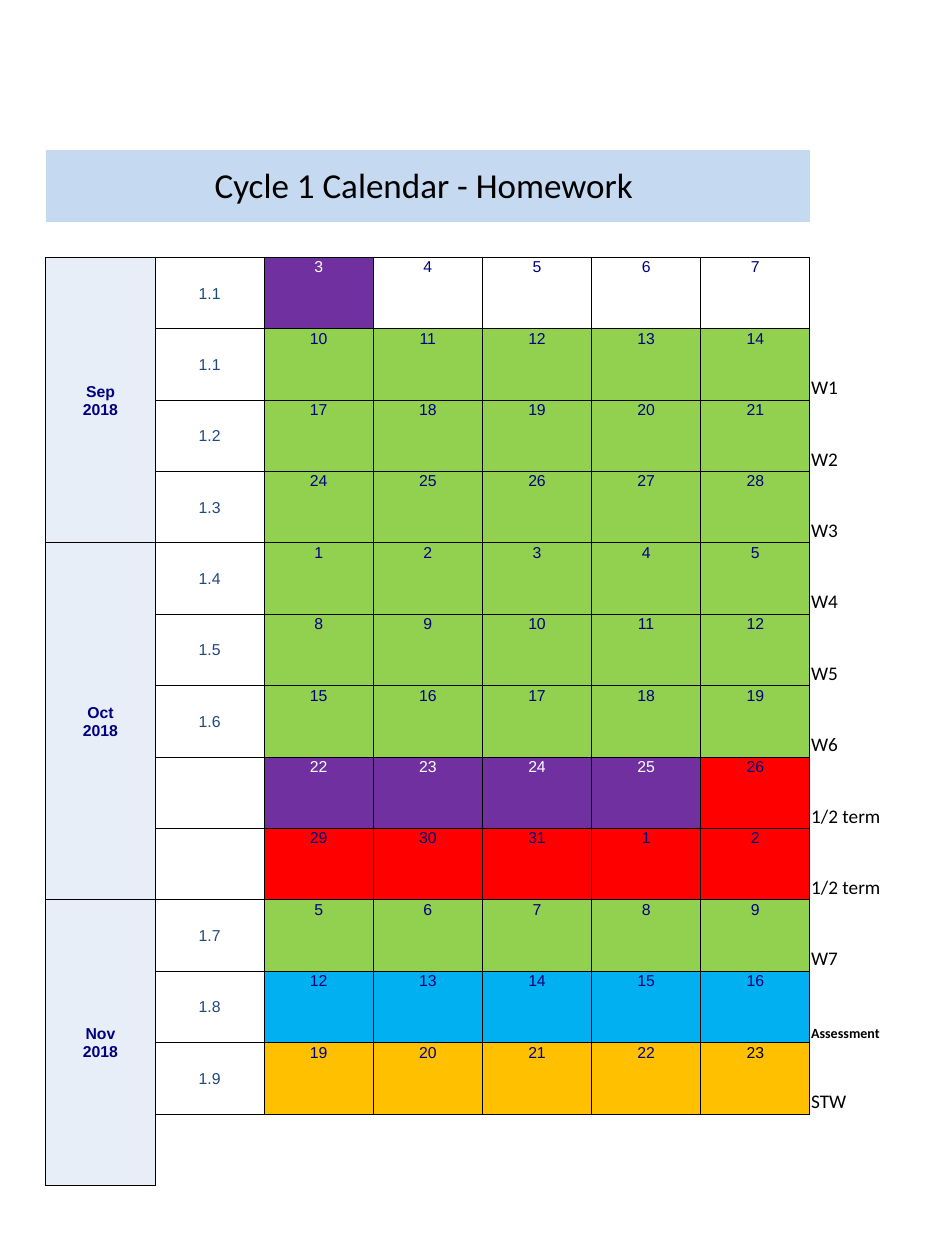
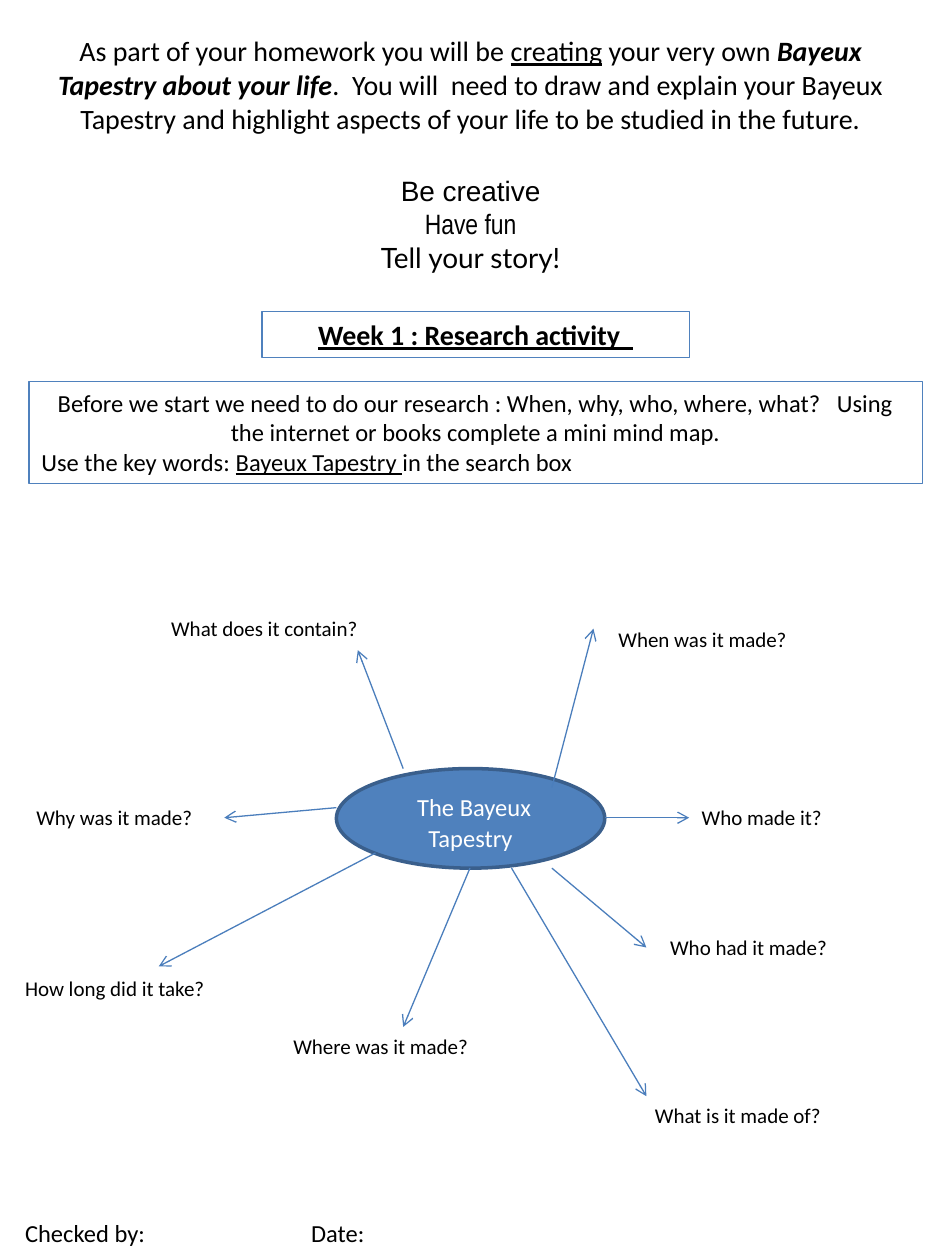
"""Build a two-page homework booklet: a term calendar and a research mind map."""
import dataclasses

import lxml.etree
import pptx
import pptx.dml.color
import pptx.enum.shapes
import pptx.enum.text
import pptx.oxml
import pptx.oxml.ns
import pptx.util

ALIGN = pptx.enum.text.PP_ALIGN
ANCHOR = pptx.enum.text.MSO_ANCHOR
FIT = pptx.enum.text.MSO_AUTO_SIZE
SHAPE = pptx.enum.shapes.MSO_SHAPE
qn = pptx.oxml.ns.qn

PAGE_COLUMNS, PAGE_ROWS = 75, 100
TITLE_ONLY, BLANK = 5, 6
LEFT, RIGHT = 1, 3
NO_TABLE_STYLE = "{2D5ABB26-0587-4C30-8999-92F81FD0307C}"


@dataclasses.dataclass(frozen=True)
class Theme:
    font: str = "Calibri"
    calendar_font: str = "Arial"
    banner_size: int = 20
    lead_size: int = 16
    body_size: int = 14
    label_size: int = 12
    note_size: int = 11
    day_size: int = 9
    small_size: int = 8
    ink: str = "000000"
    white: str = "FFFFFF"
    navy: str = "000080"
    week_blue: str = "1F497D"
    banner: str = "C5D9F1"
    month: str = "E8EEF7"
    accent: str = "4F81BD"
    accent_dark: str = "3A5F8C"
    arrow: str = "4B7EBC"
    teaching: str = "92D050"
    closed: str = "7030A0"
    holiday: str = "FF0000"
    assessment: str = "00B0F0"
    review: str = "FFC000"


THEME = Theme()

MONTHS = [("Sep\n2018", 4), ("Oct\n2018", 5), ("Nov\n2018", 4)]

DAY_FILLS = {"-": None, "T": THEME.teaching, "C": THEME.closed,
             "H": THEME.holiday, "A": THEME.assessment, "R": THEME.review}

WEEKS = [
    ("1.1", 3, "C----", ""),
    ("1.1", 10, "TTTTT", "W1"),
    ("1.2", 17, "TTTTT", "W2"),
    ("1.3", 24, "TTTTT", "W3"),
    ("1.4", 1, "TTTTT", "W4"),
    ("1.5", 8, "TTTTT", "W5"),
    ("1.6", 15, "TTTTT", "W6"),
    ("", 22, "CCCCH", "1/2 term"),
    ("", 29, "HHHHH", "1/2 term"),
    ("1.7", 5, "TTTTT", "W7"),
    ("1.8", 12, "AAAAA", "Assessment"),
    ("1.9", 19, "RRRRR", "STW"),
]

QUESTIONS = [
    ("When was it made?", (48.1, 49.2, 17.3), (43.8, 62.5), (47.1, 49.9), None),
    ("Who made it?", (54.7, 63.4, 15.9), (48, 64.9), (54.7, 64.9), LEFT),
    ("Why was it made?", (1.9, 63.4, 15.9), (26.7, 64.1), (17.8, 64.9), RIGHT),
    ("Where was it made?", (22.3, 81.5, 18.4), (37.3, 68.9), (32, 81.5), None),
    ("Who had it made?", (52.2, 73.7, 15), (43.8, 68.9), (51.3, 75.2), None),
    ("What does it contain?", (12.6, 48.4, 19.7), (32, 61), (28.4, 51.6), None),
    ("How long did it take?", (1, 76.9, 24.8), (29.8, 67.7), (12.6, 76.7), None),
    ("What is it made of?", (51, 87, 20.6), (40.6, 68.9), (51.3, 87), None),
]


def rgb(value):
    return pptx.dml.color.RGBColor.from_string(value)


def write(para, text, *, size, font=THEME.font, color=THEME.ink, bold=False,
          italic=False, underline=False, align=None):
    if align is not None:
        para.alignment = align
    for index, line in enumerate(text.split("\n")):
        if index:
            para.add_line_break()
        span = para.add_run()
        span.text = line
        span.font.size = pptx.util.Pt(size)
        span.font.name = font
        span.font.color.rgb = rgb(color)
        span.font.bold, span.font.italic, span.font.underline = bold, italic, underline


class Booklet:
    def __init__(self, theme):
        self.theme = theme
        self.deck = pptx.Presentation()
        self.deck.slide_width = pptx.util.Inches(7.5)
        self.deck.slide_height = pptx.util.Inches(10)
        self.page = None

    def add_page(self, layout):
        self.page = self.deck.slides.add_slide(self.deck.slide_layouts[layout])

    def x(self, columns):
        return round(self.deck.slide_width * columns / PAGE_COLUMNS)

    def y(self, rows):
        return round(self.deck.slide_height * rows / PAGE_ROWS)

    def area(self, left, top, width, height):
        return self.x(left), self.y(top), self.x(width), self.y(height)

    def outline(self, box, color, width):
        box.line.color.rgb = rgb(color)
        box.line.width = pptx.util.Pt(width)

    def fit(self, box, mode=FIT.SHAPE_TO_FIT_TEXT):
        box.text_frame.word_wrap = True
        box.text_frame.auto_size = mode
        return box.text_frame

    def title(self, text, area):
        box = self.page.shapes.title
        box.left, box.top, box.width, box.height = self.area(*area)
        self.outline(box, self.theme.accent, 0.75)
        frame = self.fit(box, FIT.NONE)
        frame.vertical_anchor = ANCHOR.MIDDLE
        write(frame.paragraphs[0], text, size=self.theme.lead_size,
              bold=True, underline=True, align=ALIGN.CENTER)

    def text(self, area):
        return self.fit(self.page.shapes.add_textbox(*self.area(*area)))

    def label(self, text, area, size):
        frame = self.text(area)
        write(frame.paragraphs[0], text, size=size)
        return frame

    def shape(self, kind, area, line, width, fill=None):
        box = self.page.shapes.add_shape(kind, *self.area(*area))
        box.shadow.inherit = False
        if fill:
            box.fill.solid()
            box.fill.fore_color.rgb = rgb(fill)
        else:
            box.fill.background()
        self.outline(box, line, width)
        box.text_frame.word_wrap = True
        return box

    def arrow(self, start, end):
        line = self.page.shapes.add_connector(
            pptx.enum.shapes.MSO_CONNECTOR.STRAIGHT,
            self.x(start[0]), self.y(start[1]), self.x(end[0]), self.y(end[1]))
        self.outline(line, self.theme.arrow, 0.75)
        lxml.etree.SubElement(line.line._get_or_add_ln(), qn("a:tailEnd"), type="arrow")
        lxml.etree.SubElement(line._element.spPr, qn("a:effectLst"))
        return line

    def table(self, area, row_units, column_count):
        frame = self.page.shapes.add_table(len(row_units), column_count, *self.area(*area))
        table = frame.table
        table.first_row = table.horz_banding = False
        table._tbl.tblPr.find(qn("a:tableStyleId")).text = NO_TABLE_STYLE
        for column in table.columns:
            column.width = self.x(area[2] / column_count)
        for row, units in zip(table.rows, row_units):
            row.height = self.y(area[3] * units / sum(row_units))
        for cell in table.iter_cells():
            cell.margin_left = cell.margin_right = cell.margin_top = pptx.util.Inches(0.01)
            cell.margin_bottom = 0
            end = cell.text_frame.paragraphs[0]._p.get_or_add_endParaRPr()
            end.set("sz", str(self.theme.day_size * 100))
        return table

    def border(self, cell):
        properties = cell._tc.get_or_add_tcPr()
        for position, side in enumerate(("lnL", "lnR", "lnT", "lnB")):
            line = pptx.oxml.parse_xml(
                f'<a:{side} {pptx.oxml.ns.nsdecls("a")} w="6350"><a:solidFill>'
                f'<a:srgbClr val="{self.theme.ink}"/></a:solidFill></a:{side}>')
            properties.insert(position, line)

    def cell(self, cell, text, fill=None, anchor=ANCHOR.MIDDLE, **style):
        cell.vertical_anchor = anchor
        if fill:
            cell.fill.solid()
            cell.fill.fore_color.rgb = rgb(fill)
        if text:
            write(cell.text_frame.paragraphs[0], text, **style)


def build_calendar(booklet):
    theme = booklet.theme
    booklet.add_page(BLANK)
    heading_rows, note_column = 4, 7
    table = booklet.table((3.64, 9.1, 69.3, 85), [1] * heading_rows + [2] * 13, 8)
    last_row = len(table.rows) - 1
    day_style = dict(size=theme.day_size, font=theme.calendar_font, align=ALIGN.CENTER)

    for row in range(heading_rows, last_row + 1):
        for column in range(note_column if row < last_row else 1):
            booklet.border(table.cell(row, column))

    banner = table.cell(1, 0)
    banner.merge(table.cell(2, note_column - 1))
    booklet.cell(banner, "Cycle 1 Calendar - Homework ", theme.banner,
                 size=theme.banner_size, align=ALIGN.CENTER)

    row = heading_rows
    for name, week_count in MONTHS:
        month = table.cell(row, 0)
        month.merge(table.cell(row + week_count - 1, 0))
        booklet.cell(month, name, theme.month, color=theme.navy, bold=True, **day_style)
        row += week_count

    for row, (week, first_day, kinds, note) in enumerate(WEEKS, heading_rows):
        booklet.cell(table.cell(row, 1), week, color=theme.week_blue, **day_style)
        for offset, kind in enumerate(kinds):
            color = theme.white if kind == "C" else theme.navy
            if kind == "R" and offset == len(kinds) - 1:
                color = theme.ink
            day = (first_day + offset - 1) % 31 + 1
            booklet.cell(table.cell(row, 2 + offset), str(day), DAY_FILLS[kind],
                         ANCHOR.TOP, color=color, **day_style)
        strong = note == "Assessment"
        booklet.cell(table.cell(row, note_column), note, anchor=ANCHOR.BOTTOM, bold=strong,
                     size=theme.small_size if strong else theme.note_size)


def build_research(booklet):
    theme = booklet.theme
    booklet.add_page(TITLE_ONLY)
    booklet.title("Week 1 : Research activity  ", (20.8, 24.7, 33.9, 3.7))

    intro = booklet.text((1.9, 2.2, 70.9, 20.2))
    para = intro.paragraphs[0]
    for text, style in [
        ("As part of your homework you will be ", {}),
        ("creating", dict(underline=True)),
        (" your very own ", {}),
        ("Bayeux Tapestry about your life", dict(bold=True, italic=True)),
        (".  You will  need to draw and explain your Bayeux Tapestry and highlight "
         "aspects of your life to be studied in the future.", {}),
    ]:
        write(para, text, size=theme.lead_size, align=ALIGN.CENTER, **style)
    for text, font, gap in [("Be creative", "Arial", 22), ("Have fun", "Arial Narrow", 0),
                            ("Tell your story!", "Lato", 0)]:
        para = intro.add_paragraph()
        para.space_before = pptx.util.Pt(gap)
        write(para, text, size=theme.lead_size, font=font, align=ALIGN.CENTER)

    task = booklet.fit(booklet.shape(SHAPE.RECTANGLE, (2.3, 30.3, 70.9, 8.1),
                                     theme.accent, 0.75))
    task.vertical_anchor = ANCHOR.TOP
    write(task.paragraphs[0], "Before we start we need to do our research : When, why, who, "
          "where, what?   Using the internet or books complete a mini mind map.",
          size=theme.body_size, align=ALIGN.CENTER)
    para = task.add_paragraph()
    for text, underline in [("Use the key words: ", False), ("Bayeux Tapestry ", True),
                            ("in the search box", False)]:
        write(para, text, size=theme.body_size, underline=underline, align=ALIGN.LEFT)

    topic = booklet.shape(SHAPE.OVAL, (26.7, 61, 21.3, 7.9), theme.accent_dark, 2,
                          theme.accent)
    topic.text_frame.vertical_anchor = ANCHOR.MIDDLE
    for text, size in [(" ", 18), ("The Bayeux Tapestry", theme.body_size)]:
        write(topic.text_frame.paragraphs[0], text, size=size, color=theme.white,
              align=ALIGN.CENTER)

    for question, (left, top, width), start, end, side in QUESTIONS:
        booklet.label(question, (left, top, width, 3), theme.label_size)
        box = booklet.page.shapes[-1]
        line = booklet.arrow(start, end)
        if side is not None:
            line.end_connect(box, side)

    footer = booklet.label("Checked by:\tDate:", (1, 96.2, 42.8, 3.4), theme.body_size)
    tabs = lxml.etree.SubElement(footer.paragraphs[0]._p.get_or_add_pPr(), qn("a:tabLst"))
    lxml.etree.SubElement(tabs, qn("a:tab"), pos=str(booklet.x(22.7)), algn="l")


def main():
    booklet = Booklet(THEME)
    build_calendar(booklet)
    build_research(booklet)
    booklet.deck.save("out.pptx")


if __name__ == "__main__":
    main()
